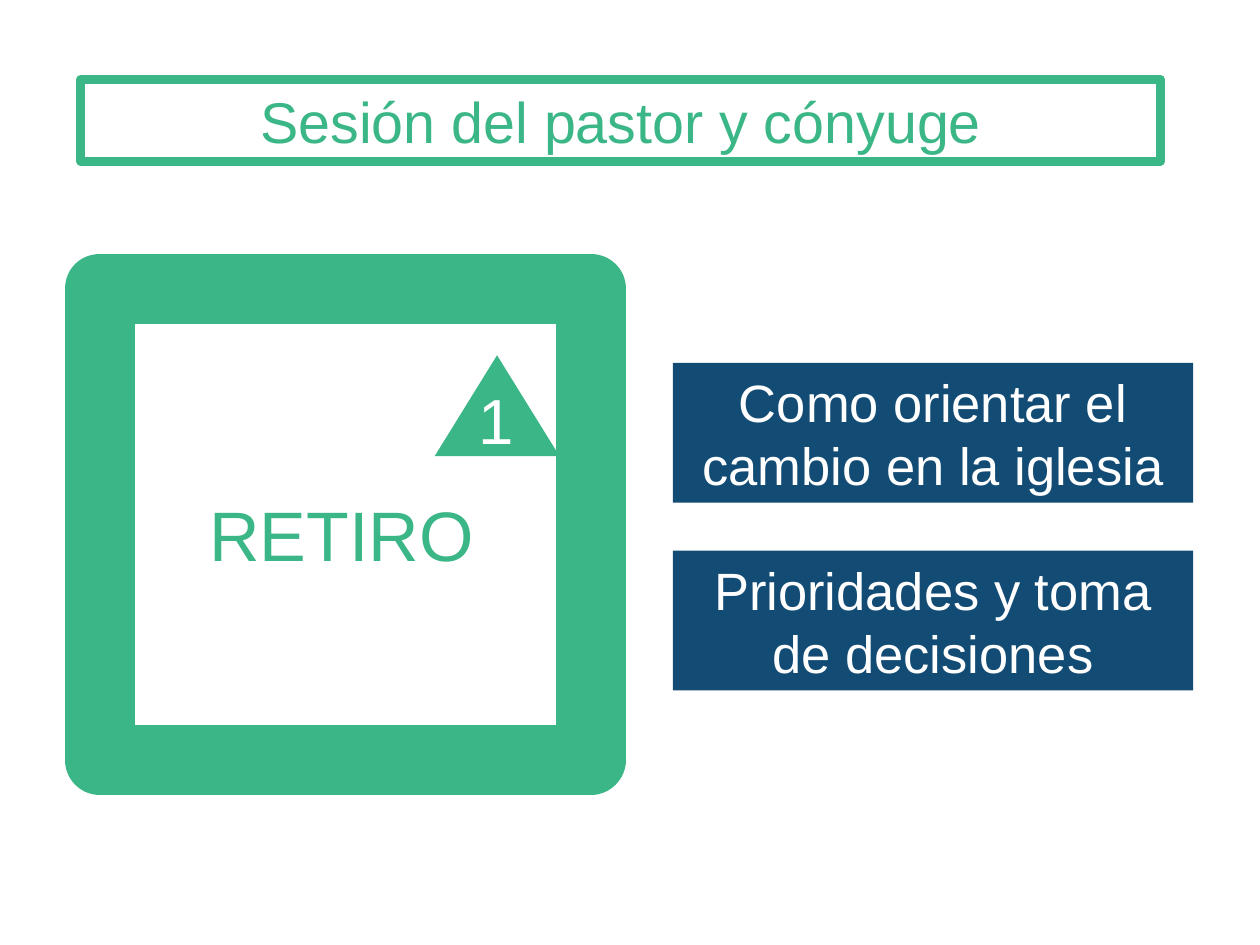
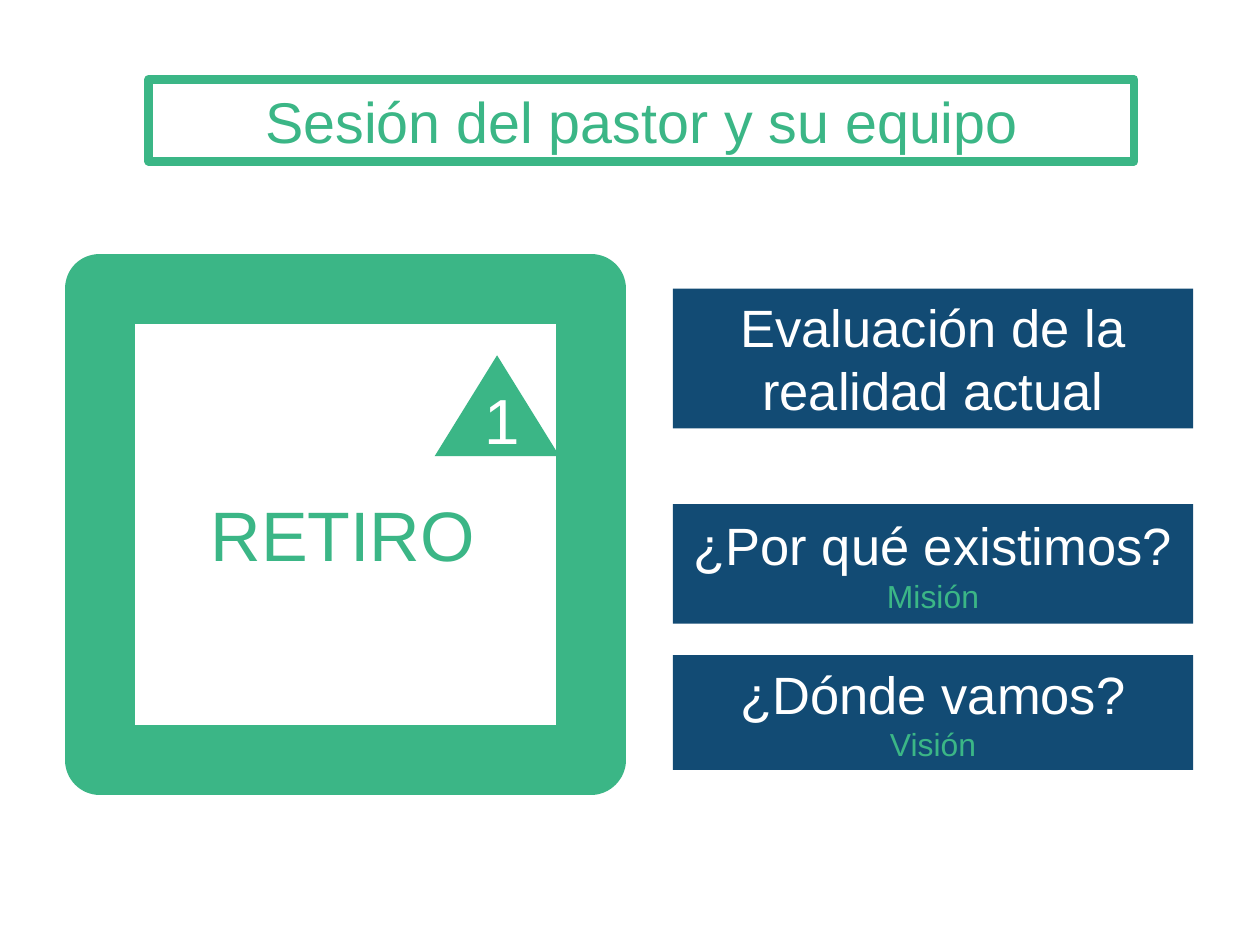
"""Build two slides that pair a framed retreat badge with the topics of its session."""
from dataclasses import dataclass

from lxml.etree import SubElement
from pptx import Presentation
from pptx.dml.color import RGBColor as RGB
from pptx.enum.shapes import MSO_SHAPE as Shape
from pptx.enum.text import MSO_ANCHOR as Anchor, MSO_AUTO_SIZE as AutoSize, PP_ALIGN as Align
from pptx.oxml.ns import qn
from pptx.util import Inches, Pt


@dataclass(frozen=True)
class Theme:
    """Colours, type sizes and line widths of the deck."""
    green: RGB = RGB(0x3B, 0xB6, 0x86)
    navy: RGB = RGB(0x12, 0x4B, 0x74)
    white: RGB = RGB(0xFF, 0xFF, 0xFF)
    font: str = "Arial"
    title: float = 32.8
    badge: float = 40
    number: float = 36.4
    topic: float = 30
    note: float = 18.2
    title_line: float = 5
    frame_line: float = 40


THEME = Theme()
WIDTH, HEIGHT = Inches(10), Inches(7.5)
COLUMNS, ROWS = 100, 75
TOPIC_LEFT, TOPIC_COLUMNS = 53.4, 41.3

SESSIONS = [
    {
        "title": "Sesión del pastor y cónyuge",
        "title_span": (6.4, 85.7),
        "badge_columns": 28.2,
        "number_left": 37,
        "topics": [
            (28.8, 11.1, "Como orientar el cambio en la iglesia", None),
            (43.7, 11.1, "Prioridades y toma de decisiones", None),
        ],
    },
    {
        "title": "Sesión del pastor y su equipo",
        "title_span": (11.8, 78.2),
        "badge_columns": 28.4,
        "number_left": 37.5,
        "topics": [
            (22.9, 11.1, "Evaluación de la realidad actual", None),
            (40, 9.5, "¿Por qué existimos?", "Misión"),
            (52, 9.1, "¿Dónde vamos?", "Visión"),
        ],
    },
]


def cells(left, top, columns, rows):
    """Turn grid cells into left, top, width and height on the slide."""
    return (int(WIDTH * left / COLUMNS), int(HEIGHT * top / ROWS),
            int(WIDTH * columns / COLUMNS), int(HEIGHT * rows / ROWS))


def write(sp, lines, align=Align.CENTER):
    """Write (text, size, colour) lines as the paragraphs of a shape."""
    tf = sp.text_frame
    tf.word_wrap = True
    tf.auto_size = AutoSize.NONE
    tf.vertical_anchor = Anchor.MIDDLE
    for i, (text, size, color) in enumerate(lines):
        p = tf.paragraphs[0] if i == 0 else tf.add_paragraph()
        p.text = text
        p.alignment = align
        p.font.name, p.font.size = THEME.font, Pt(size)
        p.font.color.rgb = color


def outline(sp, width):
    """Give a shape a green outline with rounded corners."""
    sp.line.color.rgb = THEME.green
    sp.line.width = Pt(width)
    SubElement(sp.line._get_or_add_ln(), qn("a:round"))


def add_block(s, kind, area, fill=None):
    """Add a preset shape without shadow or outline."""
    sp = s.shapes.add_shape(kind, *cells(*area))
    sp.shadow.inherit = False
    sp.line.fill.background()
    if fill is None:
        sp.fill.background()
    else:
        sp.fill.solid()
        sp.fill.fore_color.rgb = fill
    return sp


def add_label(s, area, line, align=Align.CENTER):
    """Add a one-line text box."""
    write(s.shapes.add_textbox(*cells(*area)), [line], align)


def set_title(s, text, left, columns):
    """Place the title in its outlined box."""
    sp = s.shapes.title
    sp.left, sp.top, sp.width, sp.height = cells(left, 6.3, columns, 6.5)
    sp.fill.solid()
    sp.fill.fore_color.rgb = THEME.white
    outline(sp, THEME.title_line)
    write(sp, [(text, THEME.title, THEME.green)])


def add_badge(s, columns, number_left):
    """Add the framed retreat badge with its numbered triangle."""
    outline(add_block(s, Shape.RECTANGLE, (7.9, 22.9, 39, 37.4)), THEME.frame_line)
    add_label(s, (13, 38.5, columns, 7.7), ("RETIRO", THEME.badge, THEME.green))
    add_block(s, Shape.ISOSCELES_TRIANGLE, (34.5, 28.2, 9.9, 8), THEME.green)
    add_label(s, (number_left, 29.7, 6.1, 7.1), ("1", THEME.number, THEME.white), Align.LEFT)


def add_topic(s, top, rows, text, note):
    """Add a topic panel with an optional small note."""
    sp = add_block(s, Shape.RECTANGLE, (TOPIC_LEFT, top, TOPIC_COLUMNS, rows), THEME.navy)
    lines = [(text, THEME.topic, THEME.white)]
    if note:
        lines.append((note, THEME.note, THEME.green))
    write(sp, lines)


def main():
    """Build and save the deck."""
    prs = Presentation()
    prs.slide_width, prs.slide_height = WIDTH, HEIGHT
    title_only = prs.slide_layouts[5]
    for session in SESSIONS:
        s = prs.slides.add_slide(title_only)
        set_title(s, session["title"], *session["title_span"])
        add_badge(s, session["badge_columns"], session["number_left"])
        for topic in session["topics"]:
            add_topic(s, *topic)
    prs.save("out.pptx")


if __name__ == "__main__":
    main()
